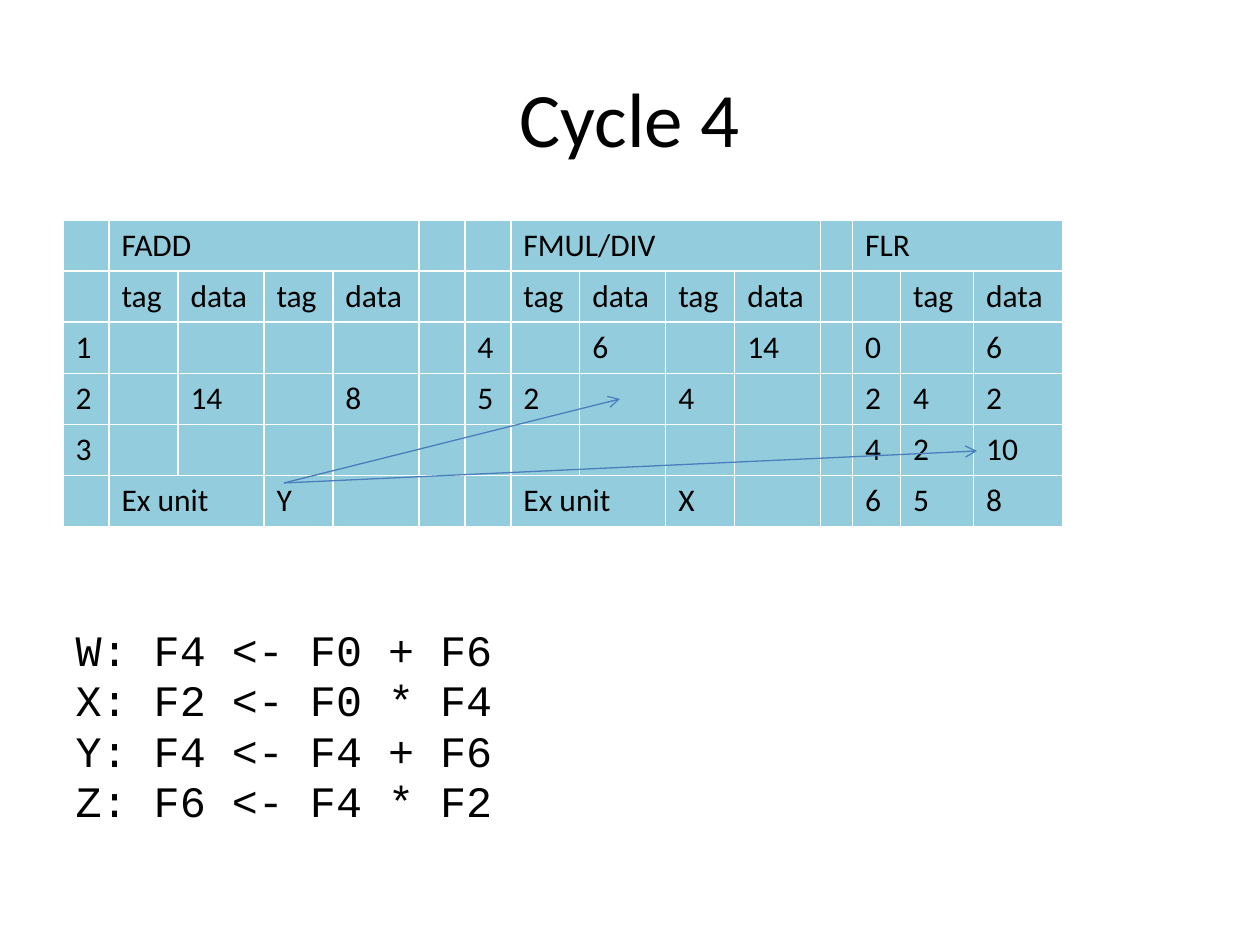
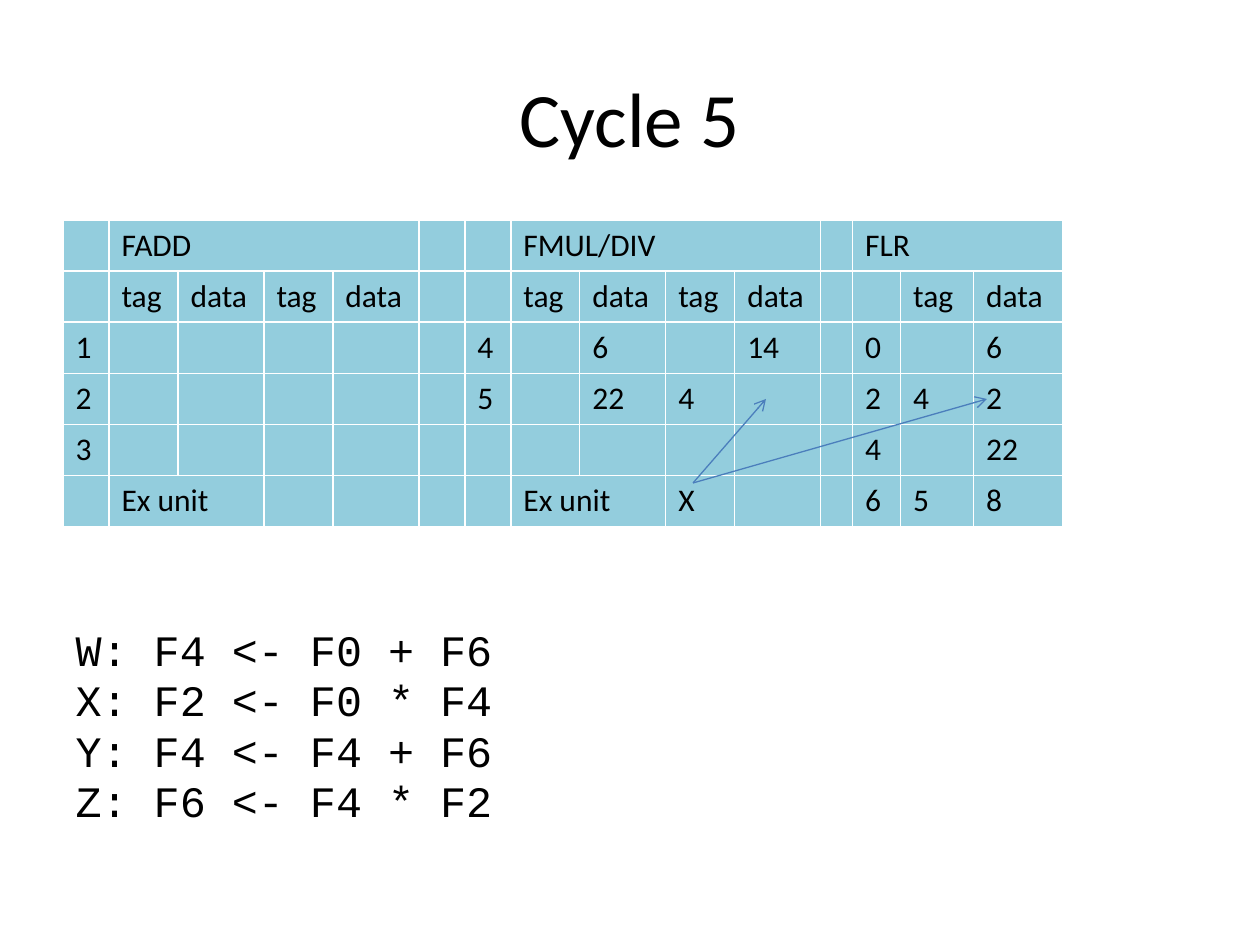
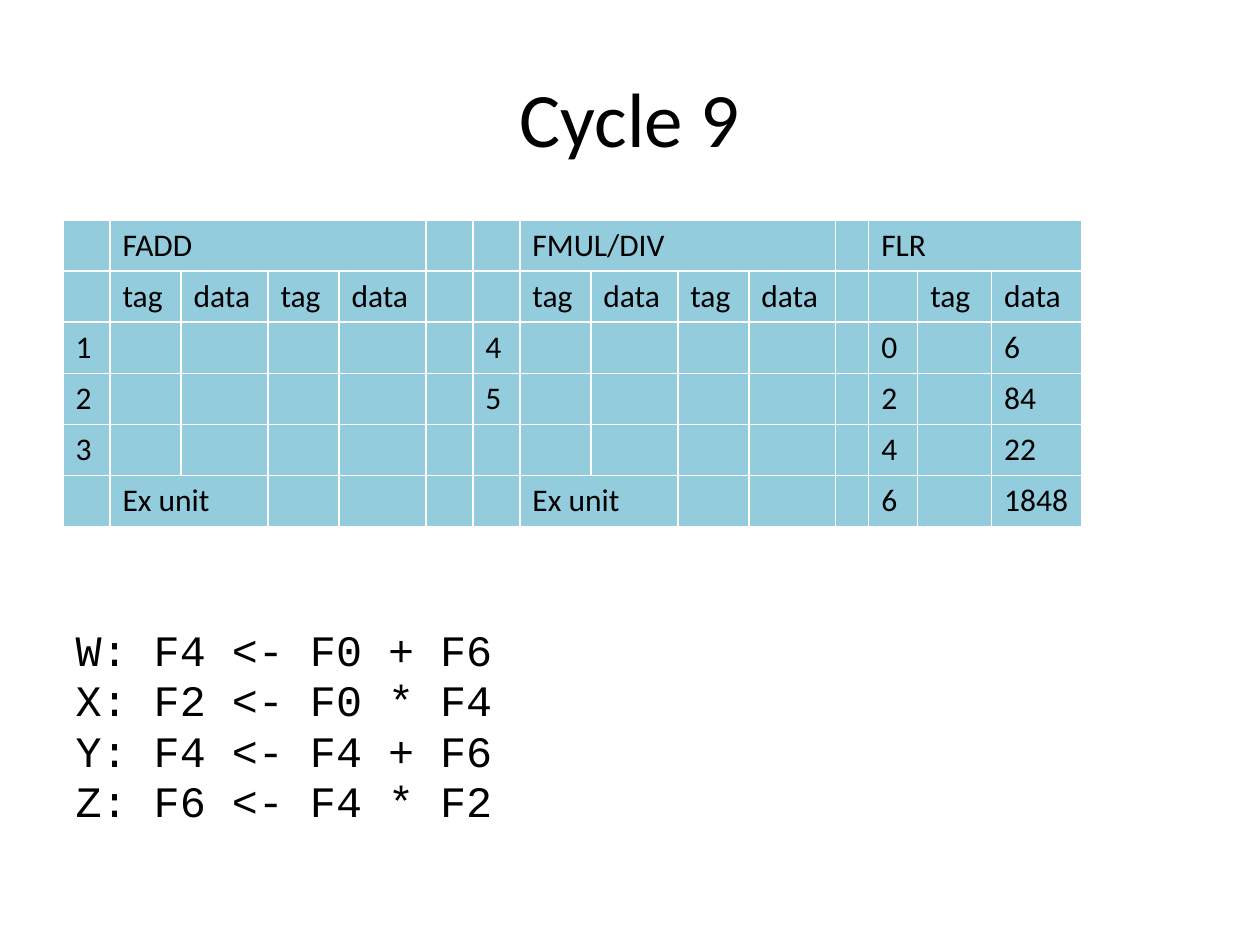
"""Build three slides that follow reservation stations through cycles 4, 5 and 9."""
from dataclasses import dataclass

from lxml import etree
from pptx import Presentation
from pptx import util as u
from pptx.dml import color
from pptx.enum import shapes, text
from pptx.oxml import ns

PX = 914400 / 126
BLACK, WHITE, FILL, LINE = "000000", "FFFFFF", "93CDDD", "4B7EBC"
SANS, MONO = "Calibri", "Courier New"
ROWS, ROW = 6, 51
CODE = ("W: F4 <- F0 + F6", "X: F2 <- F0 * F4",
        "Y: F4 <- F4 + F6", "Z: F6 <- F4 * F2")
SPANS = ((0, 1, 4), (0, 7, 10), (0, 12, 14), (5, 1, 2), (5, 7, 8))

Grid = dict[tuple[int, int], str]
Point = tuple[int, int]

BASE: Grid = {
    (0, 1): "FADD", (0, 7): "FMUL/DIV", (0, 12): "FLR",
    (5, 1): "Ex unit", (5, 7): "Ex unit",
    **{(1, col): "tag" for col in (1, 3, 7, 9, 13)},
    **{(1, col): "data" for col in (2, 4, 8, 10, 14)},
    **{(row, 0): str(row - 1) for row in (2, 3, 4)},
    **{(row, 6): str(row + 2) for row in (2, 3)},
    **{(row, 12): str(2 * row - 4) for row in (2, 3, 4, 5)},
}


@dataclass(frozen=True)
class Widths:
    """Column widths of the table in px."""
    key: int
    tag: int
    data: int
    flr: tuple[int, ...]

    def cols(self) -> tuple[int, ...]:
        """List every column from left to right."""
        pairs = (self.tag, self.data) * 2
        return (self.key, *pairs, self.key, self.key, *pairs, *self.flr)


@dataclass(frozen=True)
class Arrow:
    """An arrow between two points in px."""
    start: Point
    end: Point


@dataclass(frozen=True)
class Cycle:
    """The state of all units in one cycle."""
    num: int
    widths: Widths
    vals: Grid
    arrows: tuple[Arrow, ...] = ()


SLIM = Widths(46, 69, 86, (32, 48, 73, 89))
WIDE = Widths(47, 71, 87, (33, 49, 74, 90))
ADD, MUL = (284, 483), (693, 483)
CYCLES = (
    Cycle(4, SLIM, {
        (2, 8): "6", (2, 10): "14", (2, 14): "6",
        (3, 2): "14", (3, 4): "8", (3, 7): "2", (3, 9): "4",
        (3, 13): "4", (3, 14): "2", (4, 13): "2", (4, 14): "10",
        (5, 3): "Y", (5, 9): "X", (5, 13): "5", (5, 14): "8",
    }, (Arrow(ADD, (620, 399)), Arrow(ADD, (977, 451)))),
    Cycle(5, SLIM, {
        (2, 8): "6", (2, 10): "14", (2, 14): "6",
        (3, 8): "22", (3, 9): "4", (3, 13): "4", (3, 14): "2",
        (4, 14): "22", (5, 9): "X", (5, 13): "5", (5, 14): "8",
    }, (Arrow(MUL, (766, 399)), Arrow(MUL, (987, 399)))),
    Cycle(9, WIDE, {
        (2, 14): "6", (3, 14): "84", (4, 14): "22", (5, 14): "1848",
    }),
)


def px(num: int) -> u.Emu:
    """Turn px into EMU."""
    return u.Emu(round(num * PX))


def rgb(code: str) -> color.RGBColor:
    """Turn a hex string into a colour."""
    return color.RGBColor.from_string(code)


def place(shape, left: int, top: int, width: int, height: int) -> None:
    """Move and size a shape."""
    shape.left, shape.top = px(left), px(top)
    shape.width, shape.height = px(width), px(height)


def write(par, words: str, size: float, face: str) -> None:
    """Add one black run to a paragraph."""
    run = par.add_run()
    run.text = words
    run.font.size, run.font.name = u.Pt(size), face
    run.font.color.rgb = rgb(BLACK)


def sub(node, tag: str, **attrs: str):
    """Add a drawing element below a node."""
    return etree.SubElement(node, ns.qn(tag), attrs)


def paint(cell) -> None:
    """Give a cell its white borders and its fill."""
    props = cell._tc.get_or_add_tcPr()
    for side in "LRTB":
        edge = sub(props, f"a:ln{side}", w=str(u.Pt(1)))
        sub(sub(edge, "a:solidFill"), "a:srgbClr", val=WHITE)
    cell.fill.solid()
    cell.fill.fore_color.rgb = rgb(FILL)


def draw_title(slide, num: int) -> None:
    """Fill the title with the cycle number."""
    title = slide.shapes.title
    place(title, 63, 38, 1134, 157)
    frame = title.text_frame
    frame.vertical_anchor = text.MSO_ANCHOR.MIDDLE
    par = frame.paragraphs[0]
    par.alignment = text.PP_ALIGN.CENTER
    write(par, f"Cycle {num}", 44, SANS)


def draw_table(slide, widths: Widths, vals: Grid) -> None:
    """Draw the table of units and registers."""
    cols = widths.cols()
    frame = slide.shapes.add_table(ROWS, len(cols), px(63), px(220),
                                   px(sum(cols)), px(ROWS * ROW))
    table = frame.table
    table.first_row = table.horz_banding = False
    for col, width in zip(table.columns, cols):
        col.width = px(width)
    for cell in table.iter_cells():
        paint(cell)
    for row, first, last in SPANS:
        table.cell(row, first).merge(table.cell(row, last))
    for (row, col), words in vals.items():
        write(table.cell(row, col).text_frame.paragraphs[0], words, 18, SANS)


def draw_arrow(slide, arrow: Arrow) -> None:
    """Draw a thin line with an open head."""
    link = slide.shapes.add_connector(
        shapes.MSO_CONNECTOR.STRAIGHT,
        *map(px, arrow.start), *map(px, arrow.end))
    link.line.width = u.Pt(0.75)
    link.line.color.rgb = rgb(LINE)
    sub(link.line._get_or_add_ln(), "a:tailEnd", type="arrow")
    sub(link._element.spPr, "a:effectLst")


def draw_code(slide) -> None:
    """List the four instructions in the body."""
    body = slide.placeholders[1]
    place(body, 63, 525, 1124, 319)
    frame = body.text_frame
    frame.auto_size = text.MSO_AUTO_SIZE.NONE
    frame.margin_top = px(108)
    for num, words in enumerate(CODE):
        par = frame.add_paragraph() if num else frame.paragraphs[0]
        par.line_spacing = 0.8
        sub(par._p.get_or_add_pPr(), "a:buNone")
        write(par, words, 24.8, MONO)


def main() -> None:
    """Build and save the slides."""
    deck = Presentation()
    deck.slide_width, deck.slide_height = px(1260), px(945)
    for cycle in CYCLES:
        slide = deck.slides.add_slide(deck.slide_layouts[1])
        draw_title(slide, cycle.num)
        draw_table(slide, cycle.widths, BASE | cycle.vals)
        for arrow in cycle.arrows:
            draw_arrow(slide, arrow)
        draw_code(slide)
    deck.save("out.pptx")


if __name__ == "__main__":
    main()
